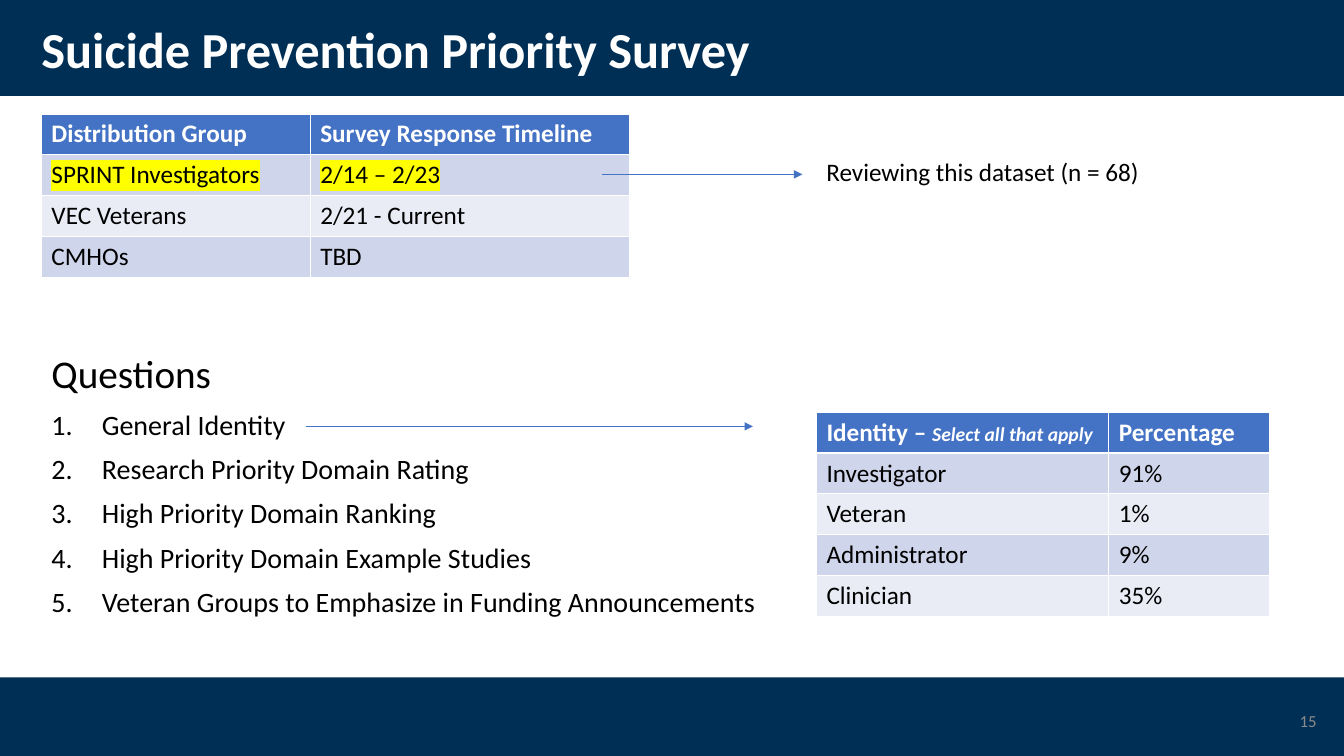
from dataclasses import dataclass

from lxml.etree import SubElement
from pptx import Presentation
from pptx.dml.color import RGBColor
from pptx.enum.shapes import MSO_CONNECTOR, MSO_SHAPE
from pptx.enum.text import MSO_ANCHOR, MSO_AUTO_SIZE, PP_ALIGN
from pptx.oxml.ns import qn
from pptx.util import Inches, Pt

SLIDE_WIDTH, SLIDE_HEIGHT = Inches(13.333), Inches(7.5)
COLUMN, ROW = SLIDE_WIDTH / 100, SLIDE_HEIGHT / 100
TABLE_ROW = 5.4
NAVY, BLUE, WHITE, BLACK = "002F56", "4472C4", "FFFFFF", "000000"
GRAY, YELLOW = "8C8C8C", "FFFF00"
STRIPES = ["CFD5EA", "E9EBF5"]

GROUPS = [
    ["Distribution Group", "Survey Response Timeline"],
    ["SPRINT Investigators", "2/14 – 2/23"],
    ["VEC Veterans", "2/21 - Current"],
    ["CMHOs", "TBD"],
]
IDENTITIES = [
    ["Identity – ", "Percentage"],
    ["Investigator", "91%"],
    ["Veteran", "1%"],
    ["Administrator", "9%"],
    ["Clinician", "35%"],
]
QUESTIONS = [
    "General Identity",
    "Research Priority Domain Rating",
    "High Priority Domain Ranking",
    "High Priority Domain Example Studies",
    "Veteran Groups to Emphasize in Funding Announcements",
]


@dataclass
class Box:
    """A region of the slide, in grid columns and rows."""

    left: float
    top: float
    width: float
    height: float

    def within(self, left, top, width, height):
        """Return a box placed relative to this one."""
        return Box(self.left + left, self.top + top, width, height)

    def emu(self):
        """Return left, top, width and height as slide lengths."""
        return (int(self.left * COLUMN), int(self.top * ROW),
                int(self.width * COLUMN), int(self.height * ROW))


def color(value):
    """Turn a hex string into a colour."""
    return RGBColor.from_string(value)


def style(font, size, hue=BLACK, bold=False):
    """Format the font of a paragraph."""
    font.name, font.size, font.bold = "Calibri", Pt(size), bold
    font.color.rgb = color(hue)


def move(placeholder, box):
    """Place a placeholder and keep its text at full size."""
    placeholder.left, placeholder.top, placeholder.width, placeholder.height = box.emu()
    placeholder.text_frame.auto_size = MSO_AUTO_SIZE.NONE


def add_band(slide, box):
    """Add a navy band behind the title."""
    band = slide.shapes.add_shape(MSO_SHAPE.RECTANGLE, *box.emu())
    band.shadow.inherit = False
    band.fill.solid()
    band.fill.fore_color.rgb = color(NAVY)
    band.line.fill.background()
    slide.shapes.title.element.addprevious(band.element)


def add_label(slide, box, wording, size, hue=BLACK, align=PP_ALIGN.LEFT):
    """Add a line of text centred vertically in its box."""
    frame = slide.shapes.add_textbox(*box.emu()).text_frame
    frame.word_wrap = True
    frame.vertical_anchor = MSO_ANCHOR.MIDDLE
    label = frame.paragraphs[0]
    label.text, label.alignment = wording, align
    style(label.font, size, hue)


def add_arrow(slide, box):
    """Add a thin arrow along the top of a box."""
    left, top, width, _ = box.emu()
    arrow = slide.shapes.add_connector(MSO_CONNECTOR.STRAIGHT, left, top, left + width, top)
    arrow.line.color.rgb = color(BLUE)
    arrow.line.width = Pt(0.5)
    properties = arrow.element.spPr
    SubElement(properties.find(qn("a:ln")), qn("a:tailEnd"), type="triangle")
    SubElement(properties, qn("a:effectLst"))


def add_grid(slide, box, rows, widths):
    """Add a striped table with a blue header and return it."""
    table = slide.shapes.add_table(len(rows), len(widths), *box.emu()).table
    for column, width in zip(table.columns, widths):
        column.width = int(width * COLUMN)
    for y, row in enumerate(rows):
        header = y == 0
        for x, wording in enumerate(row):
            cell = table.cell(y, x)
            cell.fill.solid()
            cell.fill.fore_color.rgb = color(BLUE if header else STRIPES[(y - 1) % 2])
            entry = cell.text_frame.paragraphs[0]
            entry.text = wording
            style(entry.font, 18, WHITE if header else BLACK, header)
    return table


def build_header(slide, box):
    """Build the top band and the title."""
    add_band(slide, box)
    title = slide.shapes.title
    move(title, box.within(2.33, 2.4, 86.25, 9.07))
    title.text_frame.vertical_anchor = MSO_ANCHOR.MIDDLE
    heading = title.text_frame.paragraphs[0]
    heading.text = "Suicide Prevention Priority Survey"
    heading.alignment, heading.line_spacing = PP_ALIGN.LEFT, 0.9
    style(heading.font, 36, WHITE, True)


def build_timeline(slide, box):
    """Build the table of groups with the note on the reviewed dataset."""
    widths = [20, 23.8]
    groups = add_grid(slide, box.within(0, 0, sum(widths), TABLE_ROW * len(GROUPS)),
                      GROUPS, widths)
    for cell in groups.rows[1].cells:
        run = cell.text_frame.paragraphs[0].runs[0]
        highlight = SubElement(run._r.get_or_add_rPr(), qn("a:highlight"))
        SubElement(highlight, qn("a:srgbClr"), val=YELLOW)
    add_arrow(slide, box.within(41.7, 8, 14.92, 0))
    add_label(slide, box.within(57.67, 4.93, 29.7, 5.33),
              "Reviewing this dataset (n = 68)", 18)


def build_questions(slide, box):
    """Build the numbered list of questions and its arrow."""
    body = slide.placeholders[1]
    move(body, box)
    frame = body.text_frame
    for number, wording in enumerate(["Questions"] + QUESTIONS):
        item = frame.add_paragraph() if number else frame.paragraphs[0]
        item.text = wording
        item.line_spacing, item.space_before = 0.9, Pt(10 if number else 0)
        properties = item._p.get_or_add_pPr()
        indent = Inches(0.5) if number else 0
        properties.set("marL", str(indent))
        properties.set("indent", str(-indent))
        if number:
            SubElement(properties, qn("a:buFont"), typeface="+mj-lt")
            SubElement(properties, qn("a:buAutoNum"), type="arabicPeriod")
        else:
            SubElement(properties, qn("a:buNone"))
        style(item.font, 20 if number else 28)
    add_arrow(slide, box.within(19.72, 10.13, 33.22, 0))


def build_identities(slide, box):
    """Build the table of respondent identities."""
    identities = add_grid(slide, box, IDENTITIES, [21.75, 12])
    hint = identities.cell(0, 0).text_frame.paragraphs[0].add_run()
    hint.text = "Select all that apply"
    hint.font.size, hint.font.italic = Pt(14), True


def build_footer(slide, box):
    """Build the bottom band and the page number."""
    add_band(slide, box)
    add_label(slide, box.within(76.2, 3.07, 22.5, 5.33), "15", 12, GRAY, PP_ALIGN.RIGHT)


def main():
    """Build the slide and save it."""
    deck = Presentation()
    deck.slide_width, deck.slide_height = SLIDE_WIDTH, SLIDE_HEIGHT
    slide = deck.slides.add_slide(deck.slide_layouts[1])
    build_header(slide, Box(0, 0, 100, 12.7))
    build_footer(slide, Box(0, 89.6, 100, 10.4))
    build_timeline(slide, Box(3.08, 15.07, 87.4, 21.6))
    build_questions(slide, Box(3.08, 46.27, 86.25, 38.4))
    build_identities(slide, Box(60.75, 54.53, 33.75, TABLE_ROW * len(IDENTITIES)))
    deck.save("out.pptx")


if __name__ == "__main__":
    main()
